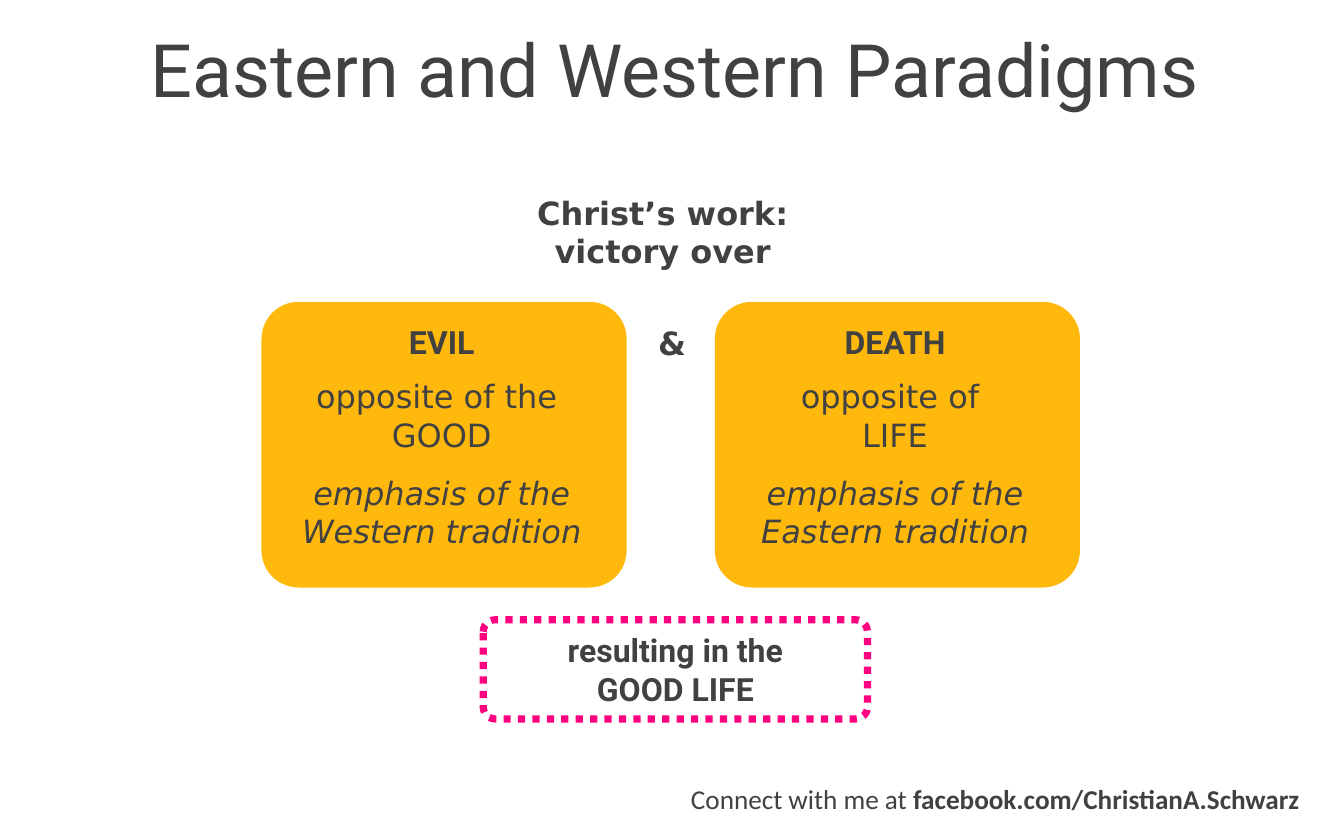
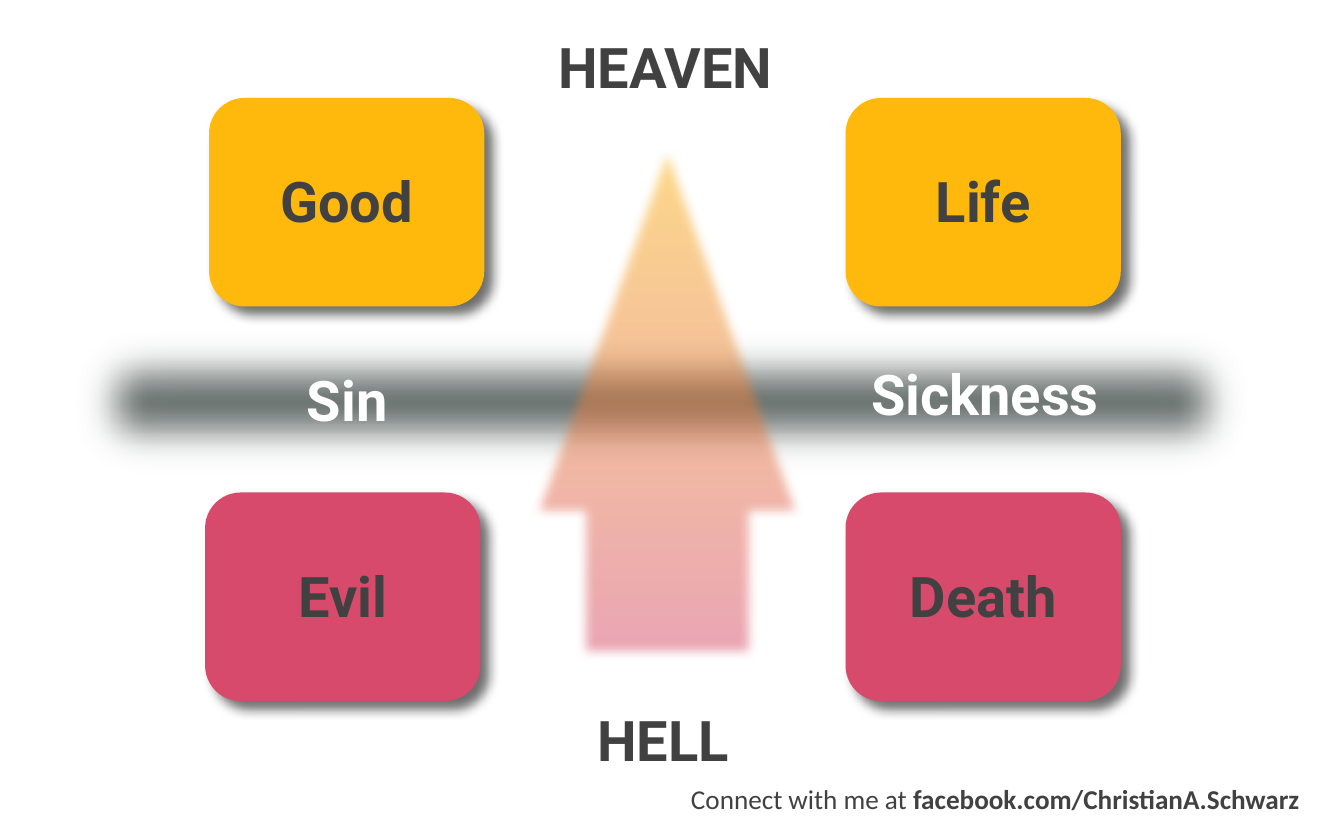
from dataclasses import dataclass

from pptx import Presentation
from pptx.dml.color import RGBColor as Rgb
from pptx.enum.dml import MSO_LINE as Dash
from pptx.enum.shapes import MSO_SHAPE as Preset
from pptx.enum.text import MSO_ANCHOR as Anchor, PP_ALIGN as Align
from pptx.oxml import parse_xml
from pptx.oxml.ns import nsdecls, qn
from pptx.util import Pt

# Grid: 112 columns by 70 rows of square cells
COLUMNS, ROWS, CELL = 112, 70, Pt(15)


@dataclass(frozen=True)
class Theme:
    ink: str = "414141"
    white: str = "FFFFFF"
    gold: str = "FFB90C"
    rose: str = "D74A6C"
    slate: str = "6C7472"
    pink: str = "FF0080"
    sans: str = "Roboto"
    wide: str = "DejaVu Sans"
    small: str = "Calibri"
    title_size: int = 92
    label_size: int = 70
    body_size: int = 40
    footer_size: int = 34


THEME = Theme()

# Text formats
BODY = dict(name=THEME.wide, size=THEME.body_size)
STRONG = dict(name=THEME.sans, size=THEME.body_size, bold=True)
LABEL = dict(name=THEME.sans, size=THEME.label_size, bold=True)
TITLE = dict(name=THEME.sans, size=THEME.title_size)
FOOTER = dict(name=THEME.small, size=THEME.footer_size)


class Deck:
    """Holds the presentation, its style and the current slide."""

    def __init__(self):
        self.show = Presentation()
        self.show.slide_width = COLUMNS * CELL
        self.show.slide_height = ROWS * CELL
        self.slide = None

    def new_slide(self):
        self.slide = self.show.slides.add_slide(self.show.slide_layouts[6])
        self.text((49.2, 64.94, 59.09, 3.31),
                  [[("Connect with me at ", {}),
                    ("facebook.com/ChristianA.Schwarz", dict(bold=True))]],
                  FOOTER, align=Align.RIGHT)

    @staticmethod
    def place(box):
        return [round(cells * CELL) for cells in box]

    @staticmethod
    def style(run, formats):
        values = {**formats, "size": Pt(formats["size"])}
        color = values.pop("color", THEME.ink)
        for attribute, value in values.items():
            setattr(run.font, attribute, value)
        run.font.color.rgb = Rgb.from_string(color)

    def fill_text(self, shape, paragraphs, formats, align=Align.CENTER):
        """Each paragraph is a string or a list of (text, extra format)."""
        frame = shape.text_frame
        setup = dict(word_wrap=True, vertical_anchor=Anchor.MIDDLE,
                     margin_left=0, margin_top=0,
                     margin_right=0, margin_bottom=0)
        for attribute, value in setup.items():
            setattr(frame, attribute, value)
        for index, content in enumerate(paragraphs):
            paragraph = frame.add_paragraph() if index else frame.paragraphs[0]
            paragraph.alignment = align
            if isinstance(content, str):
                paragraph.text = content
                for run in paragraph.runs:
                    self.style(run, formats)
                continue
            for words, extra in content:
                run = paragraph.add_run()
                run.text = words
                self.style(run, {**formats, **extra})

    def text(self, box, paragraphs, formats, align=Align.CENTER):
        area = self.slide.shapes.add_textbox(*self.place(box))
        self.fill_text(area, paragraphs, formats, align)

    def shape(self, preset, box, fill=None, adjust=()):
        shape = self.slide.shapes.add_shape(preset, *self.place(box))
        shape.shadow.inherit = False
        for index, value in enumerate(adjust):
            shape.adjustments[index] = value
        if fill:
            shape.fill.solid()
            shape.fill.fore_color.rgb = Rgb.from_string(fill)
        else:
            shape.fill.background()
        shape.line.fill.background()
        return shape

    @staticmethod
    def effect(shape, tag, attributes, content=""):
        effects = shape._element.spPr.find(qn("a:effectLst"))
        effects.append(parse_xml(
            f"<a:{tag} {nsdecls('a')} {attributes}>{content}</a:{tag}>"))

    def soften(self, shape, points):
        self.effect(shape, "softEdge", f'rad="{Pt(points)}"')

    def drop_shadow(self, shape):
        self.effect(shape, "outerShdw",
                    f'blurRad="{Pt(15)}" dist="{Pt(15)}" dir="2700000" '
                    'algn="ctr" rotWithShape="0"',
                    '<a:srgbClr val="000000"><a:alpha val="57000"/></a:srgbClr>')

    def frame(self, box, words, formats):
        frame = self.shape(Preset.ROUNDED_RECTANGLE, box, adjust=[0.12])
        frame.line.color.rgb = Rgb.from_string(THEME.pink)
        frame.line.width = Pt(9)
        frame.line.dash_style = Dash.ROUND_DOT
        self.fill_text(frame, [words], formats)

    def rising_arrow(self, box, bottom, top):
        arrow = self.shape(Preset.UP_ARROW, box, bottom, [0.63, 1.4])
        arrow.fill.gradient()
        arrow.fill.gradient_angle = 90
        for stop, color in zip(arrow.fill.gradient_stops, (bottom, top)):
            stop.color.rgb = Rgb.from_string(color)
        for color in arrow._element.spPr.iter(qn("a:srgbClr")):
            color.append(parse_xml(f'<a:alpha {nsdecls("a")} val="50000"/>'))
        self.soften(arrow, 13)


def paradigms(deck):
    deck.new_slide()
    deck.text((3.31, 0, 105.89, 11.28), ["Eastern and Western Paradigms"], TITLE)

    # Heading and joining sign
    bold_body = {**BODY, "bold": True}
    deck.text((40.03, 15.89, 30.38, 6.82),
              ["Christ’s work:", "victory over"], bold_body)
    deck.text((53, 26.98, 6, 3.22), ["&"], bold_body)

    # The two enemies
    enemies = [(21.79, "EVIL", "opposite of the \vGOOD", "Western"),
               (59.57, "DEATH", "opposite of \vLIFE", "Eastern")]
    for left, enemy, opposite, tradition in enemies:
        deck.shape(Preset.ROUNDED_RECTANGLE, (left, 25.15, 30.43, 23.81),
                   THEME.gold, [0.13])
        emphasis = f"emphasis of the {tradition} tradition"
        lines = [(26.64, 3.74, enemy, STRONG),
                 (31.2, 6.82, opposite, BODY),
                 (39.31, 6.67, emphasis, {**BODY, "italic": True})]
        for top, height, words, formats in lines:
            deck.text((left - 0.17, top, 30.38, height), [words], formats)

    # Result
    deck.frame((40.27, 51.65, 32.02, 8.26),
               "resulting in the\vGOOD LIFE", STRONG)


def heaven_and_hell(deck):
    deck.new_slide()
    row = 5.66

    # Poles
    deck.text((40.51, 2.64, 29.86, row), ["HEAVEN"], LABEL)
    deck.text((40.13, 58.75, 30.24, row), ["HELL"], LABEL)

    # Barrier
    barrier = deck.shape(Preset.RECTANGLE, (5, 26.3, 100.18, 14.35), THEME.slate)
    deck.soften(barrier, 58)
    on_barrier = {**LABEL, "color": THEME.white}
    deck.text((70.75, 29.9, 22.66, row), ["Sickness"], on_barrier)
    deck.text((17.42, 30.43, 23.04, row), ["Sin"], on_barrier)

    # Way up
    deck.rising_arrow((43.54, 9.7, 24.05, 45.36), THEME.rose, THEME.gold)

    # States above and below the barrier
    states = [("Good", 17.42, 8.16, THEME.gold), ("Life", 70.46, 8.16, THEME.gold),
              ("Evil", 17.09, 41.04, THEME.rose), ("Death", 70.46, 41.04, THEME.rose)]
    for state, left, top, color in states:
        card = deck.shape(Preset.ROUNDED_RECTANGLE, (left, top, 22.94, 17.38),
                          color, [0.17])
        deck.drop_shadow(card)
        deck.fill_text(card, [state], LABEL)
        card.text_frame.margin_bottom = Pt(5)


def main():
    deck = Deck()
    paradigms(deck)
    heaven_and_hell(deck)
    deck.show.save("out.pptx")


if __name__ == "__main__":
    main()
